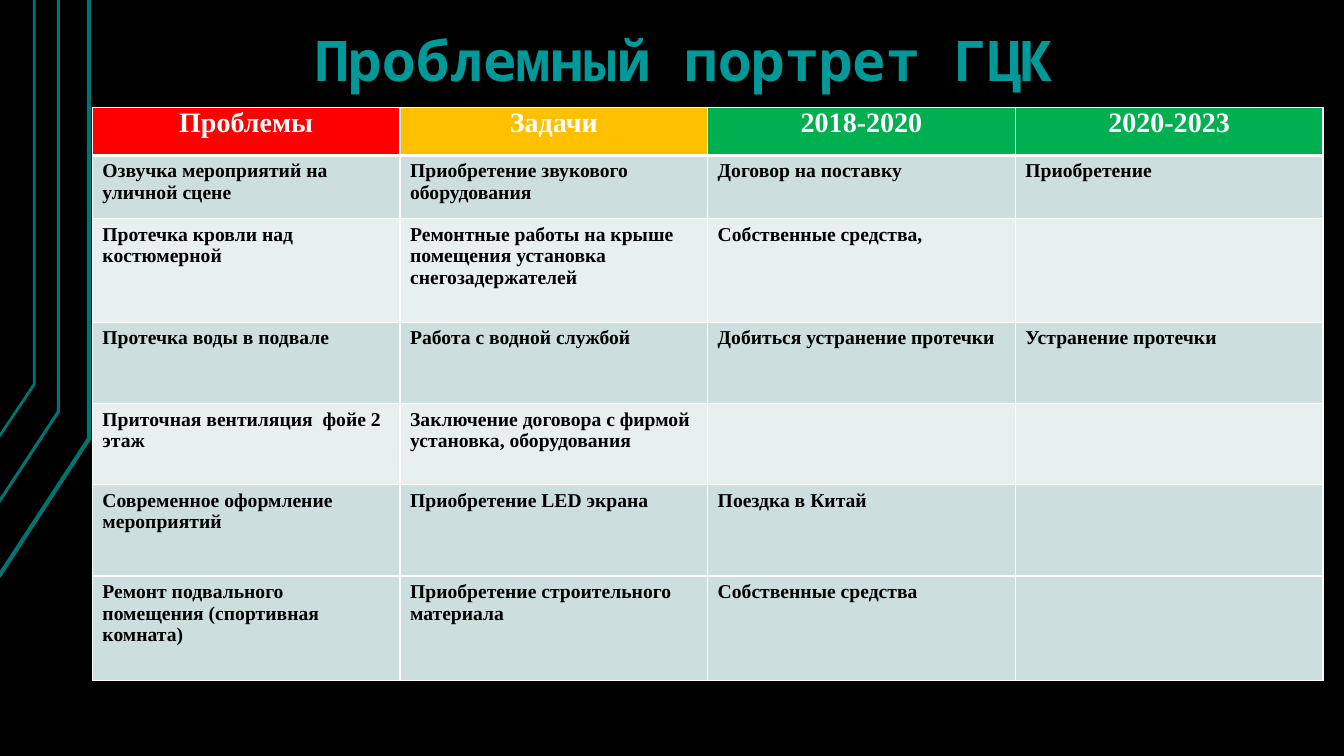
from pptx import Presentation
from pptx.dml.color import RGBColor
from pptx.enum.text import MSO_ANCHOR, PP_ALIGN
from pptx.oxml.ns import qn
from pptx.util import Pt
from lxml.etree import SubElement

BLACK = RGBColor(0x00, 0x00, 0x00)
WHITE = RGBColor(0xFF, 0xFF, 0xFF)
TEAL_LINE = RGBColor(0x00, 0x73, 0x73)
TEAL_TITLE = RGBColor(0x00, 0x99, 0x99)
RED = RGBColor(0xFF, 0x00, 0x00)
AMBER = RGBColor(0xFF, 0xC0, 0x00)
GREEN = RGBColor(0x00, 0xB0, 0x50)
BAND_DARK = RGBColor(0xCC, 0xDE, 0xDE)
BAND_LIGHT = RGBColor(0xE7, 0xEF, 0xEF)

TITLE = {"name": "Noto Sans Mono", "size": Pt(40), "bold": True}
HEADER = {"name": "Times New Roman", "size": Pt(20), "bold": True}
BODY = {"name": "Times New Roman", "size": Pt(14), "bold": True}

COLUMN_WIDTH = 219.75
TABLE_LEFT = 66
HEADER_FILLS = [RED, AMBER, GREEN, GREEN]
PLAN_ROWS = [
    (34, ["Проблемы", "Задачи", "2018-2020", "2020-2023"]),
    (45.3, ["Озвучка мероприятий на уличной сцене", "Приобретение звукового оборудования",
            "Договор на поставку", "Приобретение"]),
    (74, ["Протечка кровли над костюмерной",
          "Ремонтные работы на крыше помещения установка снегозадержателей",
          "Собственные средства,", ""]),
    (58, ["Протечка воды в подвале", "Работа с водной службой",
          "Добиться устранение протечки", "Устранение протечки"]),
    (58, ["Приточная вентиляция  фойе 2 этаж",
          "Заключение договора с фирмой установка, оборудования", "", ""]),
    (65, ["Современное оформление мероприятий", "Приобретение LED экрана",
          "Поездка в Китай", ""]),
]
REPAIR_ROWS = [
    (74.3, ["Ремонт подвального помещения (спортивная комната)",
            "Приобретение строительного материала", "Собственные средства", ""]),
]
TABLES = [(77, PLAN_ROWS, True), (411.5, REPAIR_ROWS, False)]


def write(para, text, style, color):
    span = para.add_run()
    span.text = text
    for key, value in style.items():
        setattr(span.font, key, value)
    span.font.color.rgb = color


def add_borders(cell, bottom_width):
    properties = cell._tc.get_or_add_tcPr()
    widths = {"a:lnL": 1, "a:lnR": 1, "a:lnT": 1, "a:lnB": bottom_width}
    for place, (side, width) in enumerate(widths.items()):
        line = SubElement(properties, qn(side), w=str(Pt(width)))
        SubElement(SubElement(line, qn("a:solidFill")), qn("a:srgbClr"), val=str(WHITE))
        properties.insert(place, line)


deck = Presentation()
deck.slide_width, deck.slide_height = Pt(960), Pt(540)
page = deck.slides.add_slide(deck.slide_layouts[6])
page.background.fill.solid()
page.background.fill.fore_color.rgb = BLACK

for start_y, bend_x, bend_y, weight in [
    (412, 63.5, 313.5, 3),
    (359, 41.75, 294, 2.25),
    (312.5, 24.5, 274.5, 2),
]:
    builder = page.shapes.build_freeform(Pt(-1), Pt(start_y))
    builder.add_line_segments([(Pt(bend_x), Pt(bend_y)), (Pt(bend_x), 0)], close=False)
    stripe = builder.convert_to_shape()
    stripe.shadow.inherit = False
    stripe.fill.background()
    stripe.line.color.rgb = TEAL_LINE
    stripe.line.width = Pt(weight)

box = page.shapes.add_textbox(Pt(31), Pt(15), Pt(916), Pt(55.5))
box.text_frame.word_wrap = True
heading = box.text_frame.paragraphs[0]
heading.alignment = PP_ALIGN.CENTER
write(heading, "Проблемный портрет ГЦК", TITLE, TEAL_TITLE)

for top, rows, has_header in TABLES:
    height = sum(row_height for row_height, texts in rows)
    frame = page.shapes.add_table(len(rows), 4, Pt(TABLE_LEFT), Pt(top),
                                  Pt(4 * COLUMN_WIDTH), Pt(height))
    table = frame.table
    table.first_row = has_header
    for column in table.columns:
        column.width = Pt(COLUMN_WIDTH)
    for row_index, (row_height, texts) in enumerate(rows):
        table.rows[row_index].height = Pt(row_height)
        is_header = has_header and row_index == 0
        band = BAND_LIGHT if row_index and row_index % 2 == 0 else BAND_DARK
        for column_index, text in enumerate(texts):
            cell = table.cell(row_index, column_index)
            cell.vertical_anchor = MSO_ANCHOR.TOP
            cell.fill.solid()
            cell.fill.fore_color.rgb = HEADER_FILLS[column_index] if is_header else band
            add_borders(cell, 3 if is_header else 1)
            para = cell.text_frame.paragraphs[0]
            if is_header:
                cell.margin_left = cell.margin_right = Pt(5)
                cell.margin_top = cell.margin_bottom = 0
                para.alignment = PP_ALIGN.CENTER
            if text:
                write(para, text, HEADER if is_header else BODY, WHITE if is_header else BLACK)

deck.save("out.pptx")
